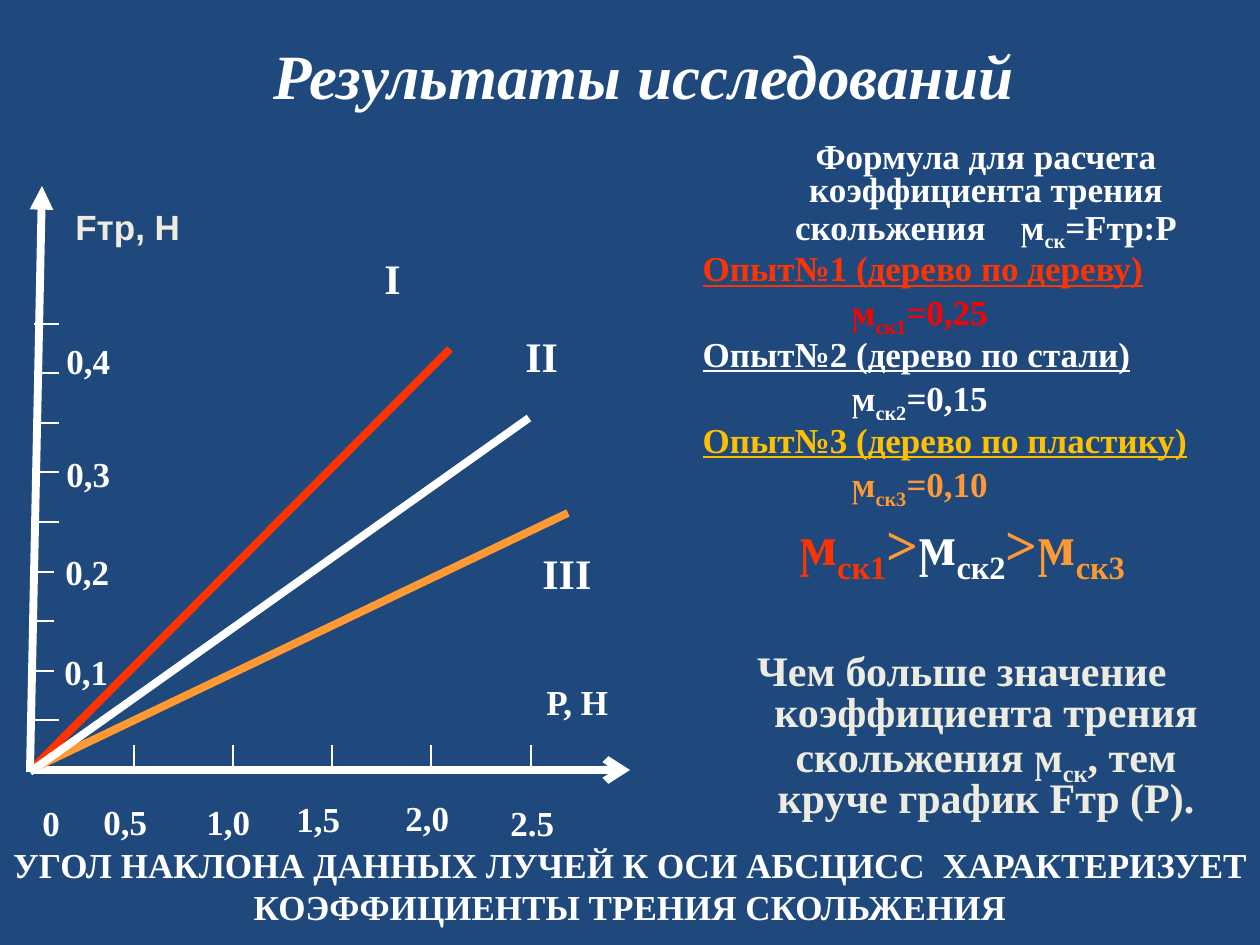
from pptx import Presentation
from pptx.dml.color import RGBColor
from pptx.enum.shapes import MSO_CONNECTOR
from pptx.enum.text import MSO_ANCHOR, MSO_AUTO_SIZE, PP_ALIGN
from pptx.oxml.ns import qn
from pptx.util import Pt
from lxml.etree import SubElement

PX = 914400 / 126
HUE = {"back": "1F497D", "white": "FFFFFF", "cream": "EEECE1", "red": "FF3300",
       "pure": "FF0000", "gold": "FFC000", "orange": "FF9933"}

deck = Presentation()
deck.slide_width, deck.slide_height = int(1260 * PX), int(945 * PX)
slide = deck.slides.add_slide(deck.slide_layouts[1])
slide.background.fill.solid()
slide.background.fill.fore_color.rgb = RGBColor.from_string(HUE["back"])


def write(para, text, hue="white", size=20, **more):
    """Add bold text; parts between underscores are subscripts."""
    form = {"name": "Times New Roman", "size": Pt(size), "bold": True, **more}
    for i, part in enumerate(text.split("_")):
        if not part:
            continue
        run = para.add_run()
        run.text = part
        for key, val in form.items():
            setattr(run.font, key, val)
        run.font.color.rgb = RGBColor.from_string(HUE[hue])
        if i % 2:
            run.font._element.set("baseline", "-25000")
    return run


def draw(x1, y1, x2, y2, hue="white", width=0.75, tip=None):
    """Add a straight line, with an arrowhead at its end if asked."""
    ends = [int(n * PX) for n in (x1, y1, x2, y2)]
    line = slide.shapes.add_connector(MSO_CONNECTOR.STRAIGHT, *ends)
    line.line.color.rgb = RGBColor.from_string(HUE[hue])
    line.line.width = Pt(width)
    if tip:
        SubElement(line.line._get_or_add_ln(), qn("a:tailEnd"), type=tip)
    SubElement(line._element.spPr, qn("a:effectLst"))


# Title and body places
title, body = slide.placeholders
for shape, box in ((title, (28, 24, 1232, 101)), (body, (690, 136, 544, 683))):
    shape.left, shape.top, shape.width, shape.height = [int(n * PX) for n in box]
    shape.text_frame.auto_size = MSO_AUTO_SIZE.NONE
title.text_frame.vertical_anchor = MSO_ANCHOR.MIDDLE
head = title.text_frame.paragraphs[0]
head.alignment = PP_ALIGN.CENTER
write(head, "Результаты исследований", size=36, italic=True)

# Body paragraphs: left margin, first-line indent, alignment
MID, LEFT = PP_ALIGN.CENTER, PP_ALIGN.LEFT
rows = [(48, 0, MID)] + [(48, -48, LEFT), (149, 0, LEFT)] * 3 + [(48, -48, MID)] * 2
frame = body.text_frame
paras = [frame.paragraphs[0]] + [frame.add_paragraph() for _ in rows[1:]]
for para, (margin, indent, align) in zip(paras, rows):
    para.alignment, para.line_spacing = align, 0.8
    props = para._p.get_or_add_pPr()
    props.set("marL", str(int(margin * PX)))
    props.set("indent", str(int(indent * PX)))
    SubElement(props, qn("a:buNone"))

# Formula and the three tests
write(paras[0], "Формула для расчета коэффициента трения скольжения")
write(paras[0], " ")._r.rPr.set("spc", "1500")
write(paras[0], "ϻ_ск_=Fтр:Р")
tests = [("дереву", "red", "pure", "0,25"), ("стали", "white", "white", "0,15"),
         ("пластику", "gold", "orange", "0,10")]
for i, (stuff, hue, tint, val) in enumerate(tests, 1):
    write(paras[2 * i - 1], f"Опыт№{i} (дерево по {stuff})", hue, underline=True)
    write(paras[2 * i], f"ϻ_ск{i}_={val}", tint)

# Comparison and conclusion
for text, hue in (("ϻ_ск1_", "red"), (">", "orange"), ("ϻ_ск2_", "white"),
                  (">ϻ_ск3_", "orange")):
    write(paras[7], text, hue, 32)
paras[8].space_before = Pt(44)
write(paras[8], "Чем больше значение коэффициента трения скольжения ϻ_ск_, "
      "тем круче график Fтр (Р).", "cream", 24)

# Horizontal axis, ticks and small arrowheads
draw(34, 770, 630, 770, width=4.5, tip="arrow")
for i in range(5):
    x = 134 + i * 397 // 4
    draw(x, 770, x, 745)
for i in range(9):
    y = 324 + i * 248 // 5
    draw(34, y, 54 if 5 <= i <= 7 else 59, y)
for x, y in ((54, 373), (44, 334)):
    draw(x, y, x, y, tip="triangle")

# Rays and vertical axis
draw(568, 513, 30, 770, "orange", 4.5)
draw(450, 349, 35, 766, "red", 4.5)
draw(30, 772, 42, 186, width=4.5, tip="triangle")
draw(529, 418, 30, 772, width=4.5)

# Labels: text, left, top, width, size
labels = [
    ("Fтр, H", 63, 199, 150, 20), ("Р, Н", 534, 674, 102, 20),
    ("0,4", 54, 333, 105, 20), ("0,3", 54, 446, 93, 20),
    ("0,2", 53, 544, 164, 20), ("0,1", 52, 644, 107, 20),
    ("0", 30, 795, 35, 20), ("0,5", 91, 794, 96, 20),
    ("1,0", 194, 794, 95, 20), ("1,5", 284, 791, 91, 20),
    ("2,0", 393, 790, 77, 20), ("2.5", 498, 795, 81, 20),
    ("I", 372, 246, 58, 24), ("II", 513, 324, 98, 24), ("III", 530, 541, 76, 24),
]
for text, x, y, wide, size in labels:
    box = slide.shapes.add_textbox(*[int(n * PX) for n in (x, y, wide, 54)])
    box.text_frame.word_wrap = True
    look = {"name": "Arial"} if text == "Fтр, H" else {}
    write(box.text_frame.paragraphs[0], text, "cream" if look else "white", size, **look)

# Closing line
foot = slide.shapes.add_textbox(*[int(n * PX) for n in (0, 837, 1260, 97)])
foot.text_frame.word_wrap = True
para = foot.text_frame.paragraphs[0]
para.alignment = MID
write(para, "УГОЛ НАКЛОНА ДАННЫХ ЛУЧЕЙ К ОСИ АБСЦИСС")
write(para, " ")._r.rPr.set("spc", "500")
write(para, "ХАРАКТЕРИЗУЕТ КОЭФФИЦИЕНТЫ ТРЕНИЯ СКОЛЬЖЕНИЯ")

deck.save("out.pptx")
